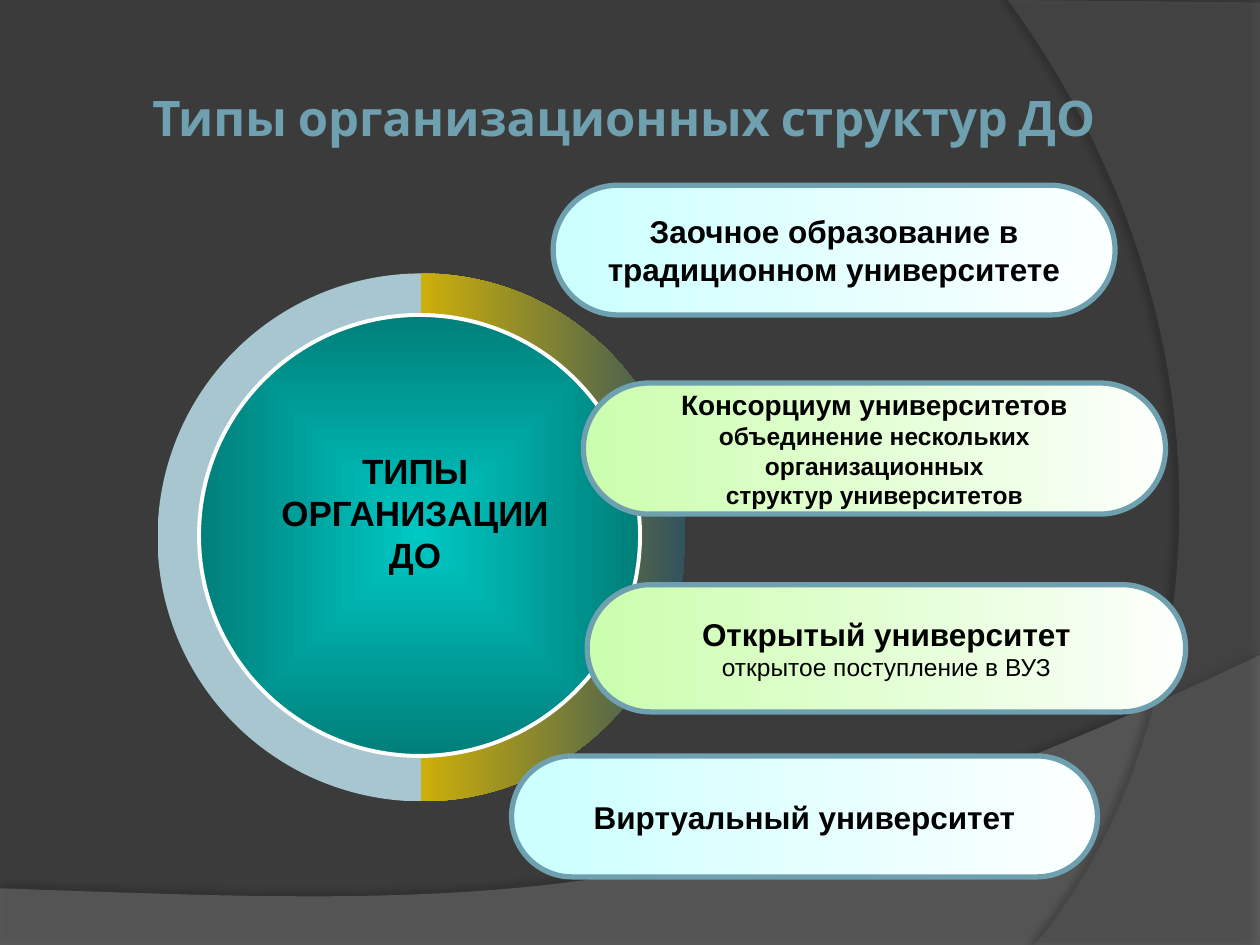
from dataclasses import dataclass

from lxml import etree
from pptx import Presentation, util as u
from pptx.dml.color import RGBColor
from pptx.enum import shapes, text
from pptx.oxml import parse_xml
from pptx.oxml.ns import nsdecls, qn

# The slide is a grid of 100 columns by 75 rows
COLUMNS, ROWS = 100, 75
CELL = u.Inches(0.1)
STEEL, BLACK, WHITE = "6EA0B0", "000000", "FFFFFF"
AQUA = [(0, "CCFFFF"), (100, "FCFFFF")]
LIME = [(0, "CBFEAE"), (100, "FCFFFB")]


@dataclass
class Line:
    words: str
    size: int
    bold: bool = True
    font: str = "Arial"
    color: str = BLACK


@dataclass
class Pill:
    box: tuple[float, float, float, float]
    stops: list[tuple[int, str]]
    lines: list[Line]


@dataclass
class Wave:
    """A translucent background band: straight corners closed by one curve."""
    corners: list[tuple[float, float]]
    curve: list[tuple[float, float]]
    color: str
    opacity: int
    shadow_opacity: int
    distance: float
    direction: int


WAVES = [
    Wave([(0, 70.5), (0, 75), (100, 75), (100, 52)],
         [(55.9, 72.9), (39.1, 71.9), (0, 70.5)], "7F7F7F", 45, 35, 3.5, 270),
    Wave([(100, 0.2), (100, 75), (82.1, 75)],
         [(93.5, 61.9), (101.8, 30), (80, 0)], "5E5E5E", 40, 45, 4, 180),
]
PILLS = [
    Pill((43.9, 14.7, 44.6, 10.3), AQUA,
         [Line("Заочное образование в", 18), Line("традиционном университете", 18)]),
    Pill((46.3, 30.4, 46.2, 10.4), LIME,
         [Line("Консорциум университетов", 16), Line("объединение нескольких", 14),
          Line("организационных", 14), Line("структур университетов", 14)]),
    Pill((46.6, 46.4, 47.5, 10.1), LIME,
         [Line("Открытый университет", 18),
          Line("открытое поступление в ВУЗ", 14, bold=False)]),
    Pill((40.6, 60, 46.5, 9.6), AQUA, [Line("Виртуальный университет", 18)]),
]


def cells(*counts: float) -> list[int]:
    return [round(count * CELL) for count in counts]


def rgb(color: str) -> RGBColor:
    return RGBColor.from_string(color)


def shadow_xml(opacity: int, blur: float, distance: float, direction: int):
    return parse_xml(
        f'<a:effectLst {nsdecls("a")}><a:outerShdw blurRad="{u.Pt(blur)}" '
        f'dist="{u.Pt(distance)}" dir="{direction * 60000}" rotWithShape="0">'
        f'<a:srgbClr val="{BLACK}"><a:alpha val="{opacity * 1000}"/></a:srgbClr>'
        '</a:outerShdw></a:effectLst>')


def fill_gradient(shape, stops: list[tuple[int, str]], centred: bool = False) -> None:
    shape.fill.gradient()
    gradient = shape._element.spPr.find(qn("a:gradFill"))
    for child in list(gradient):
        gradient.remove(child)
    stop_list = etree.SubElement(gradient, qn("a:gsLst"))
    for position, color in stops:
        stop = etree.SubElement(stop_list, qn("a:gs"), pos=str(position * 1000))
        etree.SubElement(stop, qn("a:srgbClr"), val=color)
    if centred:
        focus = etree.SubElement(gradient, qn("a:path"), {"path": "shape"})
        middle = dict.fromkeys("ltrb", "50000")
        etree.SubElement(focus, qn("a:fillToRect"), middle)
    else:
        etree.SubElement(gradient, qn("a:lin"), ang="0", scaled="1")


def add_preset(slide, kind, box, stops, outline=None, width=0, centred=False):
    shape = slide.shapes.add_shape(kind, *cells(*box))
    shape.shadow.inherit = False
    fill_gradient(shape, stops, centred)
    if outline:
        shape.line.color.rgb = rgb(outline)
        shape.line.width = u.Pt(width)
    else:
        shape.line.fill.background()
    return shape


def write_lines(frame, lines: list[Line], wrap: bool, anchor) -> None:
    frame.word_wrap = wrap
    frame.vertical_anchor = anchor
    for index, line in enumerate(lines):
        paragraph = frame.add_paragraph() if index else frame.paragraphs[0]
        paragraph.text = line.words
        paragraph.alignment = text.PP_ALIGN.CENTER
        font = paragraph.font
        font.name, font.size, font.bold = line.font, u.Pt(line.size), line.bold
        font.color.rgb = rgb(line.color)


def add_wave(slide, wave: Wave, steps: int = 48) -> None:
    # Sample the cubic curve that starts at the last corner
    control = [wave.corners[-1], *wave.curve]
    points = list(wave.corners)
    for step in range(1, steps + 1):
        t = step / steps
        weights = ((1 - t) ** 3, 3 * t * (1 - t) ** 2, 3 * t * t * (1 - t), t ** 3)
        points.append(tuple(sum(w * point[axis] for w, point in zip(weights, control))
                            for axis in (0, 1)))
    outline = [tuple(cells(*point)) for point in points]
    builder = slide.shapes.build_freeform(*outline[0])
    builder.add_line_segments(outline[1:], close=True)
    band = builder.convert_to_shape()
    band.line.fill.background()
    band.fill.solid()
    band.fill.fore_color.rgb = rgb(wave.color)
    tint = band._element.spPr.find(qn("a:solidFill"))[0]
    etree.SubElement(tint, qn("a:alpha"), val=str(wave.opacity * 1000))
    band._element.spPr.append(
        shadow_xml(wave.shadow_opacity, 4, wave.distance, wave.direction))


def add_pill(slide, pill: Pill) -> None:
    shape = add_preset(slide, shapes.MSO_SHAPE.ROUNDED_RECTANGLE, pill.box,
                       pill.stops, STEEL, 3)
    shape.adjustments[0] = 0.5
    write_lines(shape.text_frame, pill.lines, False, text.MSO_ANCHOR.MIDDLE)


def main() -> None:
    deck = Presentation()
    deck.slide_width, deck.slide_height = cells(COLUMNS, ROWS)
    slide = deck.slides.add_slide(deck.slide_layouts[6])
    slide.background.fill.solid()
    slide.background.fill.fore_color.rgb = rgb("3B3B3B")
    for wave in WAVES:
        add_wave(slide, wave)

    # Title
    title = slide.shapes.add_textbox(*cells(5, 3, 89, 12.5)).text_frame
    title.margin_left = title.margin_right = u.Inches(0.05)
    write_lines(title, [Line("Типы организационных структур ДО", 28,
                             font="Cabin", color=STEEL)],
                True, text.MSO_ANCHOR.MIDDLE)

    # Ring and hub
    ring = add_preset(slide, shapes.MSO_SHAPE.DONUT, (12.5, 21.7, 41.9, 41.9),
                      [(50, "A8C6D0"), (50, "CCAF0A"), (100, "32525D")])
    ring.adjustments[0] = 0.09
    add_preset(slide, shapes.MSO_SHAPE.OVAL, (15.8, 25, 35, 35),
               [(0, "00C8C3"), (100, "007F7A")], WHITE, 2.25, centred=True)

    for pill in PILLS:
        add_pill(slide, pill)

    # Hub caption with its text shadow
    caption = slide.shapes.add_textbox(*cells(20.1, 35.2, 25.7, 11.1)).text_frame
    write_lines(caption, [Line("ТИПЫ", 20), Line("ОРГАНИЗАЦИИ\vДО", 20)],
                True, text.MSO_ANCHOR.TOP)
    for paragraph in caption.paragraphs:
        for run in paragraph.runs:
            run.font._element.append(shadow_xml(100, 0, 2, 45))

    deck.save("out.pptx")


if __name__ == "__main__":
    main()
